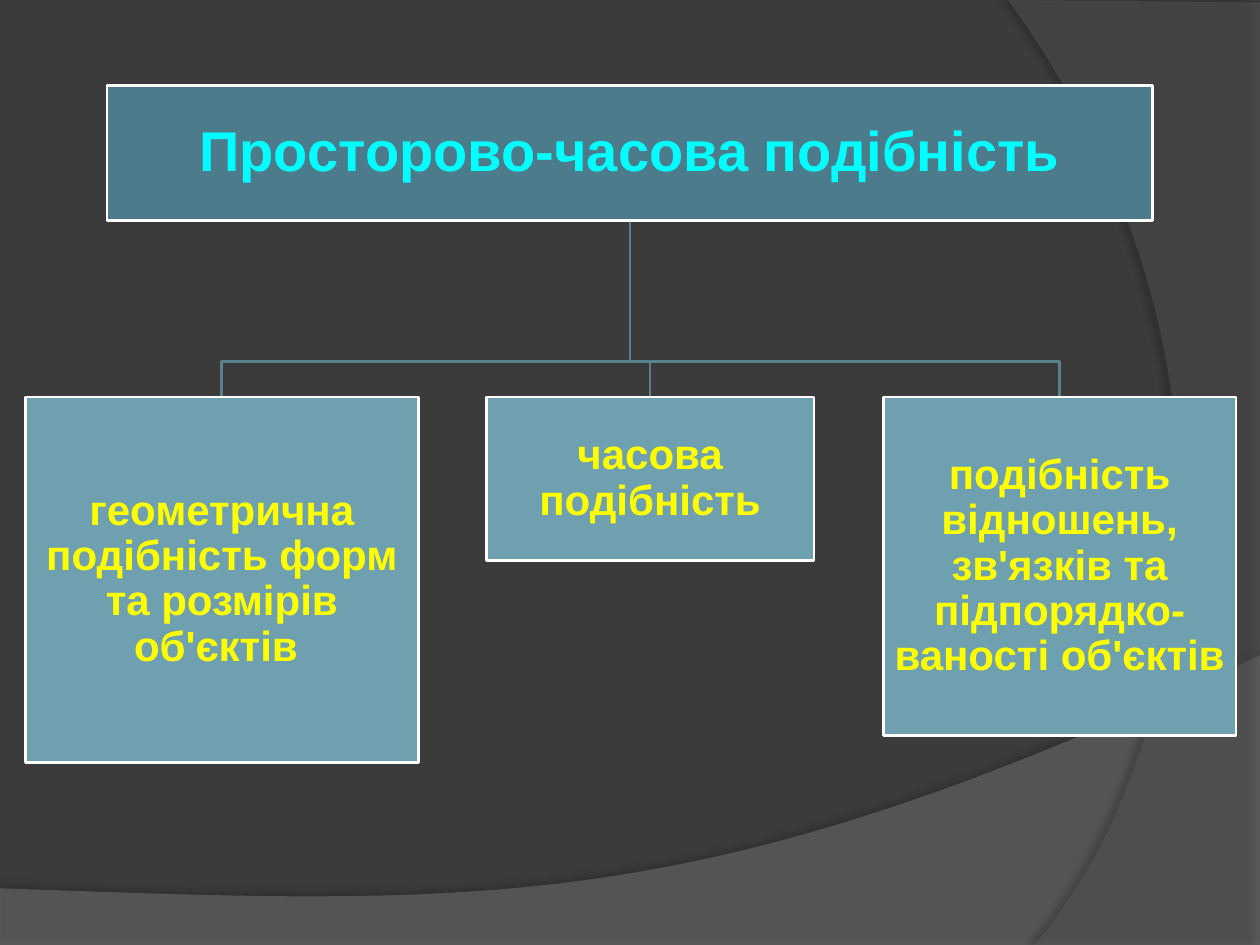
from lxml.etree import SubElement
from pptx import Presentation
from pptx.dml.color import RGBColor
from pptx.enum.shapes import MSO_SHAPE
from pptx.enum.text import MSO_ANCHOR, PP_ALIGN
from pptx.oxml.ns import qn
from pptx.util import Inches, Pt

# Content: text, (left, top, width, height)
TITLE = ("Просторово-часова подібність", (0.85, 0.68, 8.3, 1.07))
BRANCHES = [
    ("геометрична подібність форм та розмірів об'єктів ", (0.2, 3.15, 3.12, 2.9)),
    ("часова подібність", (3.86, 3.15, 2.6, 1.3)),
    ("подібність відношень, зв'язків та підпорядко-ваності об'єктів",
     (7.01, 3.15, 2.8, 2.69)),
]
TITLE_STYLE = {"fill": "4C7C8B", "color": "00FFFF", "size": 32}
BRANCH_STYLE = {"fill": "6EA0B0", "color": "FFFF00", "size": 24}
BACKGROUND, BORDER, LINE = "3B3B3B", "FFFFFF", "58808D"
BEND_Y = 2.87

# Background swooshes: corner points, then one Bezier curve from the last corner
SWOOSHES = [
    {"corners": [(0, 7.05), (0, 7.51), (10, 7.51), (10, 5.2)],
     "curve": [(5.59, 7.29), (3.91, 7.19), (0, 7.05)],
     "fill": "7F7F7F", "opacity": 45,
     "shadow": {"opacity": 35, "blur": 4, "distance": 3.5, "angle": 270}},
    {"corners": [(8, 0), (10, 0.02), (10, 7.5), (8.21, 7.5)],
     "curve": [(9.35, 6.19), (10.18, 3), (8, 0)],
     "fill": "5E5E5E", "opacity": 40,
     "shadow": {"opacity": 45, "blur": 4, "distance": 4, "angle": 180}},
]
CURVE_STEPS = 40


def rgb(value):
    return RGBColor.from_string(value)


def set_opacity(color_element, percent):
    SubElement(color_element, qn("a:alpha"), val=str(percent * 1000))


def curve_points(start, first, second, end):
    for step in range(1, CURVE_STEPS + 1):
        t = step / CURVE_STEPS
        u = 1 - t
        yield tuple(u**3 * a + 3 * u * u * t * b + 3 * u * t * t * c + t**3 * d
                    for a, b, c, d in zip(start, first, second, end))


def add_outline(slide, points, close):
    points = [(Inches(x), Inches(y)) for x, y in points]
    builder = slide.shapes.build_freeform(*points[0])
    builder.add_line_segments(points[1:], close=close)
    shape = builder.convert_to_shape()
    shape.shadow.inherit = False
    return shape


def add_swoosh(slide, corners, curve, fill, opacity, shadow):
    points = corners + list(curve_points(corners[-1], *curve))
    shape = add_outline(slide, points, close=True)
    shape.fill.solid()
    shape.fill.fore_color.rgb = rgb(fill)
    shape.line.fill.background()
    properties = shape._element.spPr
    set_opacity(properties.find(f"{qn('a:solidFill')}/{qn('a:srgbClr')}"), opacity)
    outer = SubElement(properties.find(qn("a:effectLst")), qn("a:outerShdw"),
                       blurRad=str(Pt(shadow["blur"])),
                       dist=str(Pt(shadow["distance"])),
                       dir=str(shadow["angle"] * 60000),
                       algn="ctr", rotWithShape="0")
    set_opacity(SubElement(outer, qn("a:srgbClr"), val="000000"), shadow["opacity"])


def set_line(shape, color):
    shape.line.color.rgb = rgb(color)
    shape.line.width = Pt(1.5)


def add_box(slide, text, place, fill, color, size):
    shape = slide.shapes.add_shape(MSO_SHAPE.RECTANGLE, *map(Inches, place))
    shape.shadow.inherit = False
    shape.fill.solid()
    shape.fill.fore_color.rgb = rgb(fill)
    set_line(shape, BORDER)
    frame = shape.text_frame
    frame.word_wrap = True
    frame.vertical_anchor = MSO_ANCHOR.MIDDLE
    for side in ("left", "top", "right", "bottom"):
        setattr(frame, f"margin_{side}", Inches(0.02))
    paragraph = frame.paragraphs[0]
    paragraph.alignment = PP_ALIGN.CENTER
    paragraph.line_spacing = 0.9
    run = paragraph.add_run()
    run.text = text
    for name, value in {"name": "Arial", "size": Pt(size), "bold": True}.items():
        setattr(run.font, name, value)
    run.font.color.rgb = rgb(color)


def add_branch_line(slide, parent, child):
    """Stepped line from the parent's bottom centre to the child's top centre."""
    left, top, width, height = parent
    start_x, start_y = left + width / 2, top + height
    left, end_y, width, _ = child
    end_x = left + width / 2
    points = [(start_x, start_y), (start_x, BEND_Y), (end_x, BEND_Y), (end_x, end_y)]
    shape = add_outline(slide, points, close=False)
    shape.fill.background()
    set_line(shape, LINE)


def main():
    presentation = Presentation()
    presentation.slide_width, presentation.slide_height = Inches(10), Inches(7.5)
    slide = presentation.slides.add_slide(presentation.slide_layouts[6])

    # Background
    slide.background.fill.solid()
    slide.background.fill.fore_color.rgb = rgb(BACKGROUND)
    for swoosh in SWOOSHES:
        add_swoosh(slide, **swoosh)

    # Stepped lines, behind the boxes
    for _, place in reversed(BRANCHES):
        add_branch_line(slide, TITLE[1], place)

    # Boxes
    add_box(slide, *TITLE, **TITLE_STYLE)
    for branch in BRANCHES:
        add_box(slide, *branch, **BRANCH_STYLE)

    presentation.save("out.pptx")


if __name__ == "__main__":
    main()
